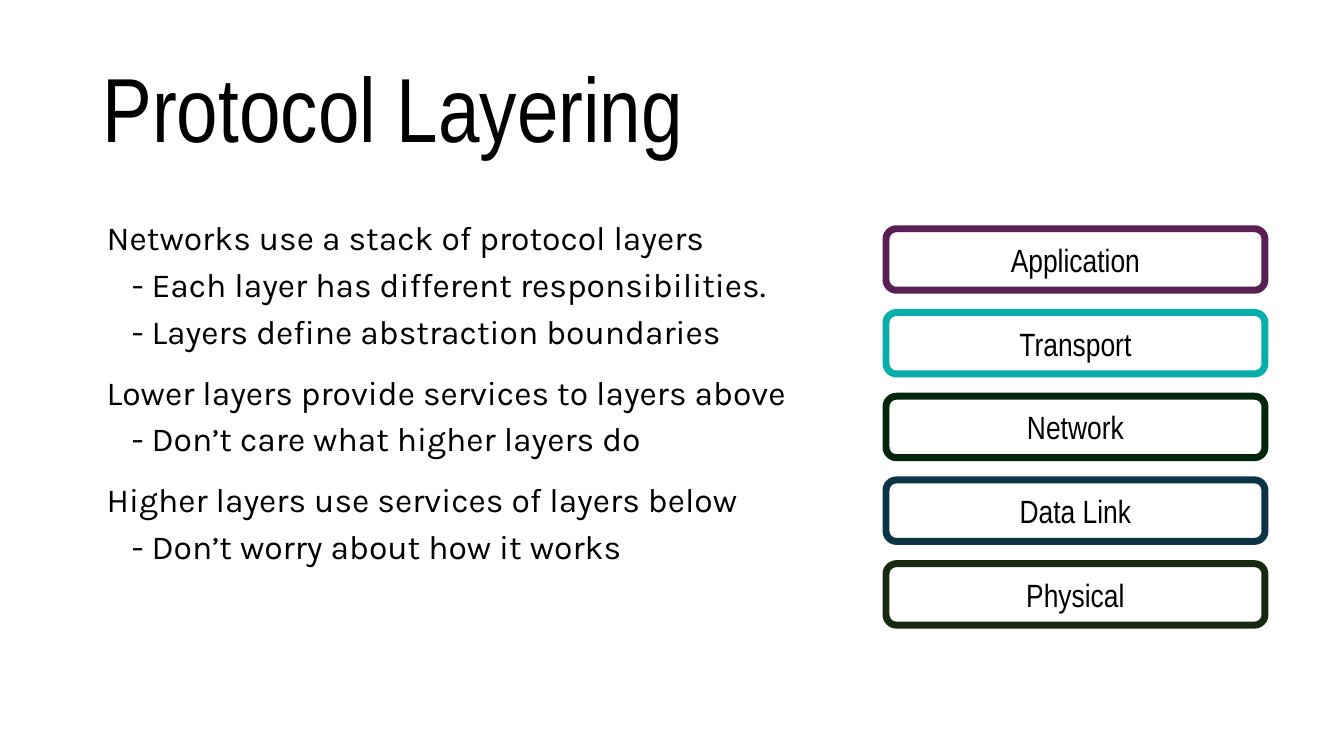
from pptx import Presentation
from pptx.dml.color import RGBColor
from pptx.enum.shapes import MSO_SHAPE
from pptx.enum.text import MSO_ANCHOR, PP_ALIGN
from pptx.util import Pt

ROUND = MSO_SHAPE.ROUNDED_RECTANGLE
MIDDLE = MSO_ANCHOR.MIDDLE
CENTER = PP_ALIGN.CENTER
BLACK = RGBColor(0x00, 0x00, 0x00)
HEAD, BODY = "Arial Narrow", "Karla"

TITLE = "Protocol Layering"
POINTS = [
    ("Networks use a stack of protocol layers",
     ["- Each layer has different responsibilities.",
      "- Layers define abstraction boundaries"]),
    ("Lower layers provide services to layers above",
     ["- Don’t care what higher layers do"]),
    ("Higher layers use services of layers below",
     ["- Don’t worry about how it works"]),
]
LAYERS = [
    ("Application", RGBColor(0x59, 0x1F, 0x54)),
    ("Transport", RGBColor(0x08, 0xAE, 0xAB)),
    ("Network", RGBColor(0x01, 0x26, 0x0A)),
    ("Data Link", RGBColor(0x0B, 0x34, 0x46)),
    ("Physical", RGBColor(0x17, 0x2A, 0x0F)),
]

# Layer stack, in points
LEFT, TOP, WIDTH, HEIGHT, STEP = 632.9, 163.4, 270.7, 43.9, 59.8


def add_run(para, text, size, face):
    run = para.add_run()
    run.text = text
    run.font.size = Pt(size)
    run.font.name = face
    run.font.color.rgb = BLACK


def add_box(slide, left, top, width, height):
    box = slide.shapes.add_textbox(Pt(left), Pt(top), Pt(width), Pt(height))
    box.text_frame.word_wrap = True
    return box.text_frame


def add_point(frame, text, margin, hang, before):
    """Fill the empty first paragraph, or add a spaced one after it."""
    para = frame.paragraphs[0]
    if para.runs:
        para = frame.add_paragraph()
        para.space_before = Pt(before)
    para.line_spacing = 0.9
    props = para._p.get_or_add_pPr()
    props.set("marL", str(Pt(margin)))
    props.set("indent", str(Pt(-hang)))
    add_run(para, text, 24, BODY)


def add_layer(slide, top, name, color):
    bar = slide.shapes.add_shape(
        ROUND, Pt(LEFT), Pt(top), Pt(WIDTH), Pt(HEIGHT))
    bar.adjustments[0] = 0.17
    bar.shadow.inherit = False
    bar.fill.background()
    bar.line.color.rgb = color
    bar.line.width = Pt(5)
    frame = bar.text_frame
    frame.margin_left = frame.margin_right = Pt(0)
    frame.margin_top = frame.margin_bottom = Pt(0)
    frame.vertical_anchor = MIDDLE
    para = frame.paragraphs[0]
    para.alignment = CENTER
    add_run(para, name, 23, HEAD)


def main():
    deck = Presentation()
    deck.slide_width, deck.slide_height = Pt(960), Pt(540)
    slide = deck.slides.add_slide(deck.slide_layouts[6])

    title = add_box(slide, 66.2, 28.8, 828, 104.4)
    title.vertical_anchor = MIDDLE
    title.paragraphs[0].line_spacing = 0.9
    add_run(title.paragraphs[0], TITLE, 65, HEAD)

    body = add_box(slide, 69.1, 154.8, 500.4, 301)
    for point, details in POINTS:
        add_point(body, point, 13.5, 13.5, 17.5)
        for detail in details:
            add_point(body, detail, 29.5, 11.5, 7.5)

    for row, (name, color) in enumerate(LAYERS):
        add_layer(slide, TOP + row * STEP, name, color)

    deck.save("out.pptx")


if __name__ == "__main__":
    main()
